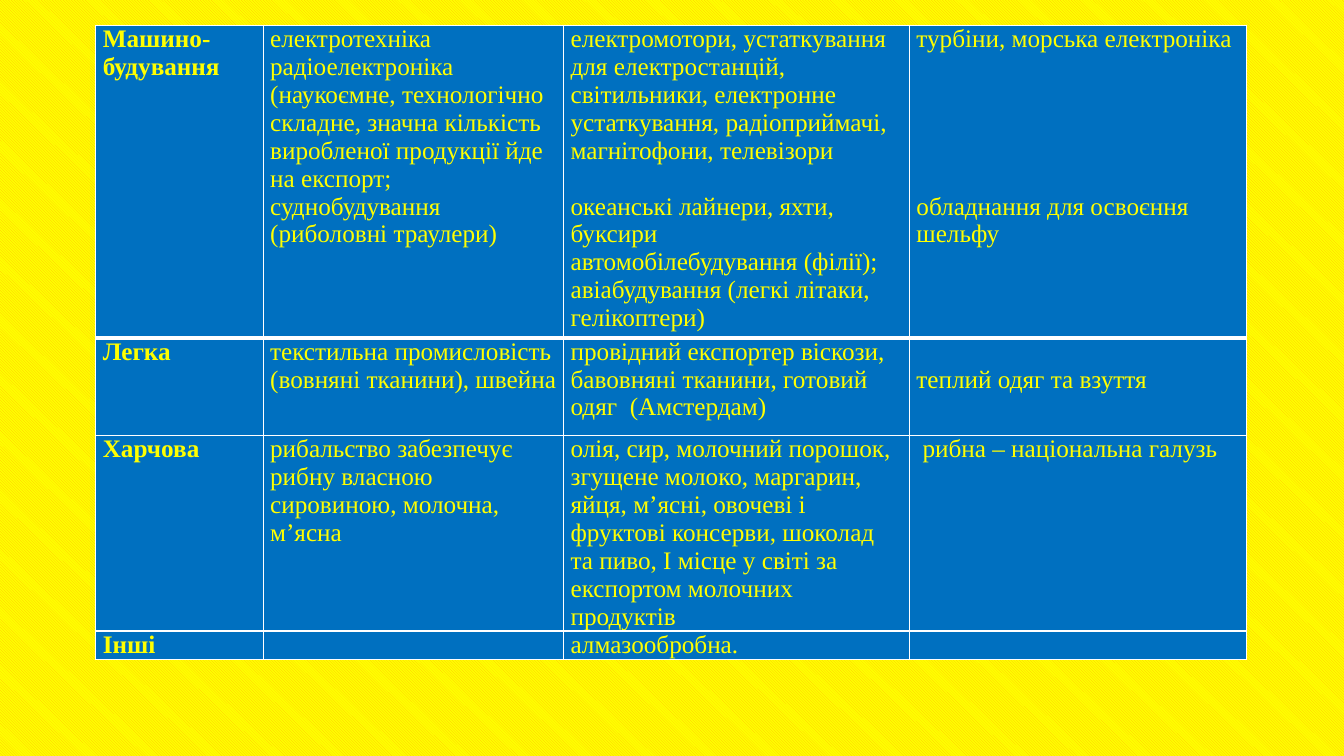
"""Build a slide with a table of industries on a patterned yellow background."""
from lxml.etree import SubElement
from pptx import Presentation
from pptx.dml.color import RGBColor
from pptx.enum.dml import MSO_PATTERN
from pptx.oxml.ns import qn
from pptx.util import Inches, Pt

YELLOW = RGBColor(0xFF, 0xFF, 0x00)
AMBER = RGBColor(0xFF, 0xC0, 0x00)
BLUE = RGBColor(0x00, 0x70, 0xC0)
WHITE = RGBColor(0xFF, 0xFF, 0xFF)

LINE = 19.93
COLUMN_WIDTHS = [1.66, 2.98, 3.43, 3.34]
ROW_HEIGHTS = [3.1, 0.97, 1.94, 0.28]
INDUSTRIES = [
    [
        ["Машино-будування"],
        ["електротехніка радіоелектроніка (наукоємне, технологічно складне, значна "
         "кількість виробленої продукції йде на експорт; суднобудування",
         "(риболовні траулери)"],
        ["електромотори, устаткування для електростанцій, світильники, електронне "
         "устаткування, радіоприймачі, магнітофони, телевізори",
         "океанські лайнери, яхти, буксири",
         "автомобілебудування (філії); авіабудування (легкі літаки, гелікоптери)"],
        ["турбіни, морська електроніка", "обладнання для освоєння шельфу"],
    ],
    [
        ["Легка"],
        ["текстильна промисловість (вовняні тканини), швейна"],
        ["провідний експортер віскози, бавовняні тканини, готовий одяг  (Амстердам)"],
        ["теплий одяг та взуття"],
    ],
    [
        ["Харчова"],
        ["рибальство забезпечує рибну власною сировиною, молочна, м’ясна"],
        ["олія, сир, молочний порошок, згущене молоко, маргарин, яйця, м’ясні, овочеві "
         "і фруктові консерви, шоколад та пиво, І місце у світі за експортом молочних "
         "продуктів"],
        ["рибна – національна галузь"],
    ],
    [["Інші"], [], ["алмазообробна."], []],
]
GAP_LINES = {(0, 2, 1): 1, (0, 3, 1): 5}
CELL_MARGINS = {
    (1, 3): {"margin_top": Pt(LINE)},
    (2, 3): {"margin_left": Inches(0.13)},
}


class SlideBuilder:
    """Hold the table style and the current slide."""

    font = {"name": "Times New Roman", "size": Pt(18)}
    margins = {"margin_left": Inches(0.07), "margin_right": Inches(0.07),
               "margin_top": 0, "margin_bottom": 0}

    def __init__(self, deck):
        """Add a blank slide to the deck."""
        self.slide = deck.slides.add_slide(deck.slide_layouts[6])

    def set_background(self):
        """Fill the background with thin diagonal lines."""
        fill = self.slide.background.fill
        fill.patterned()
        fill.pattern = MSO_PATTERN.LIGHT_DOWNWARD_DIAGONAL
        fill.fore_color.rgb = AMBER
        fill.back_color.rgb = YELLOW

    def set_format(self, target, values):
        """Set attributes from a dict of format values."""
        for name, value in values.items():
            setattr(target, name, value)

    def add_borders(self, cell, row):
        """Draw white cell borders, thick between the first two rows."""
        properties = cell._tc.get_or_add_tcPr()
        thick_side = {0: "B", 1: "T"}.get(row)
        for side in "LRTB":
            width = Pt(3) if side == thick_side else Pt(1)
            line = SubElement(properties, qn(f"a:ln{side}"), w=str(int(width)))
            SubElement(SubElement(line, qn("a:solidFill")), qn("a:srgbClr"), val=str(WHITE))

    def fill_cell(self, cell, row, column, texts):
        """Style one cell and write its paragraphs."""
        self.add_borders(cell, row)
        cell.fill.solid()
        cell.fill.fore_color.rgb = BLUE
        self.set_format(cell, self.margins | CELL_MARGINS.get((row, column), {}))
        frame = cell.text_frame
        if not texts:
            SubElement(frame.paragraphs[0]._p, qn("a:endParaRPr"), sz="1200")
        for index, text in enumerate(texts):
            para = frame.add_paragraph() if index else frame.paragraphs[0]
            if (row, column, index) in GAP_LINES:
                para.space_before = Pt(LINE * GAP_LINES[row, column, index])
            span = para.add_run()
            span.text = text
            self.set_format(span.font, self.font | {"bold": column == 0})
            span.font.color.rgb = YELLOW

    def add_table(self, left, top, contents):
        """Add the table and fill it cell by cell."""
        table = self.slide.shapes.add_table(
            len(ROW_HEIGHTS), len(COLUMN_WIDTHS), Inches(left), Inches(top),
            Inches(sum(COLUMN_WIDTHS)), Inches(sum(ROW_HEIGHTS))).table
        self.set_format(table, {"first_row": False, "horz_banding": False})
        for column, width in zip(table.columns, COLUMN_WIDTHS):
            column.width = Inches(width)
        for row, height in zip(table.rows, ROW_HEIGHTS):
            row.height = Inches(height)
        for row, cells in enumerate(contents):
            for column, texts in enumerate(cells):
                self.fill_cell(table.cell(row, column), row, column, texts)


def main():
    """Build the deck and save it."""
    deck = Presentation()
    deck.slide_width = Inches(13.33)
    deck.slide_height = Inches(7.5)
    page = SlideBuilder(deck)
    page.set_background()
    page.add_table(0.95, 0.25, INDUSTRIES)
    deck.save("out.pptx")


if __name__ == "__main__":
    main()
